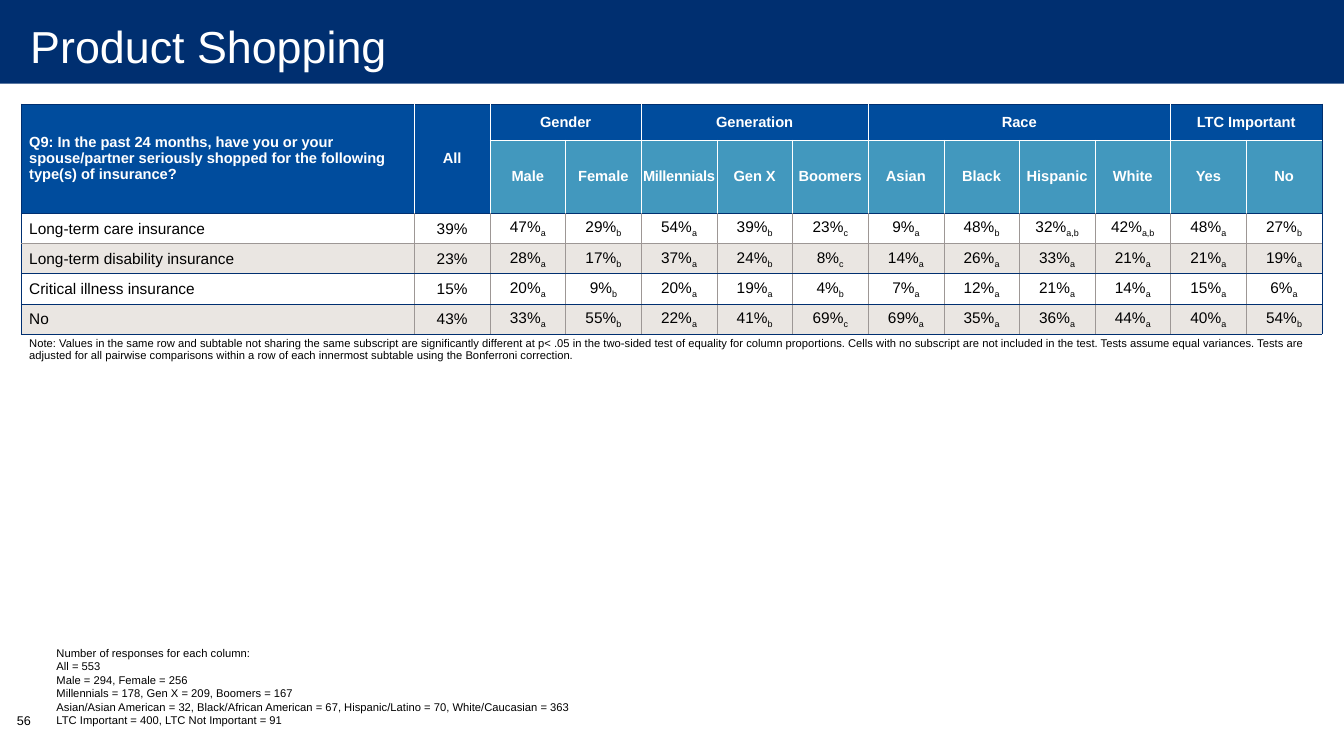
from lxml import etree
from pptx import Presentation
from pptx.dml.color import RGBColor
from pptx.enum.shapes import MSO_SHAPE
from pptx.enum.text import MSO_ANCHOR, MSO_AUTO_SIZE, PP_ALIGN
from pptx.oxml.ns import qn
from pptx.util import Inches, Pt

RECTANGLE = MSO_SHAPE.RECTANGLE
MIDDLE, BOTTOM = MSO_ANCHOR.MIDDLE, MSO_ANCHOR.BOTTOM
LEFT, CENTER = PP_ALIGN.LEFT, PP_ALIGN.CENTER
FIXED_SIZE = MSO_AUTO_SIZE.NONE

SLIDE_W, SLIDE_H = 13.33, 7.5
FONT = "Arial"
NAVY, BLUE, TEAL = "002F70", "004C9D", "4298BE"
SAND, GRAY, WHITE, BLACK = "EAE6E2", "9D9795", "FFFFFF", "000000"
PLAIN_TABLE_STYLE = "{2D5ABB26-0587-4C30-8999-92F81FD0307C}"

QUESTION = ("Q9: In the past 24 months, have you or your spouse/partner seriously "
            "shopped for the following type(s) of insurance?")
GROUPS = [
    ("Gender", ["Male", "Female"]),
    ("Generation", ["Millennials", "Gen X", "Boomers"]),
    ("Race", ["Asian", "Black", "Hispanic", "White"]),
    ("LTC Important", ["Yes", "No"]),
]
# Each answer: label, share of all, then share and subscript per subgroup
ANSWERS = [
    ("Long-term care insurance", "39%",
     "47%a 29%b 54%a 39%b 23%c 9%a 48%b 32%a,b 42%a,b 48%a 27%b"),
    ("Long-term disability insurance", "23%",
     "28%a 17%b 37%a 24%b 8%c 14%a 26%a 33%a 21%a 21%a 19%a"),
    ("Critical illness insurance", "15%",
     "20%a 9%b 20%a 19%a 4%b 7%a 12%a 21%a 14%a 15%a 6%a"),
    ("No", "43%",
     "33%a 55%b 22%a 41%b 69%c 69%a 35%a 36%a 44%a 40%a 54%b"),
]
NOTE = ("Note: Values in the same row and subtable not sharing the same subscript are "
        "significantly different at p< .05 in the two-sided test of equality for column "
        "proportions. Cells with no subscript are not included in the test. Tests assume "
        "equal variances. Tests are adjusted for all pairwise comparisons within a row of "
        "each innermost subtable using the Bonferroni correction.")
RESPONSES = [
    "Number of responses for each column:",
    "All = 553",
    "Male = 294, Female = 256",
    "Millennials = 178, Gen X = 209, Boomers = 167",
    "Asian/Asian American = 32, Black/African American = 67, "
    "Hispanic/Latino = 70, White/Caucasian = 363",
    "LTC Important = 400, LTC Not Important = 91",
]

HEADER_ROWS = 2
NOTE_ROW = HEADER_ROWS + len(ANSWERS)
COLUMNS = 2 + sum(len(subgroups) for _, subgroups in GROUPS)
ROW_EDGES = [NAVY, WHITE, NAVY, GRAY, NAVY, NAVY, NAVY]  # line above each row


def color(hex_value):
    return RGBColor.from_string(hex_value)


def style(paragraph, size, hex_value, bold=False, align=LEFT):
    paragraph.alignment = align
    font = paragraph.font
    font.name, font.size, font.bold = FONT, Pt(size), bold
    font.color.rgb = color(hex_value)


def place(shape, box):
    shape.left, shape.top, shape.width, shape.height = map(Inches, box)


def set_margins(holder, left, top, right, bottom):
    holder.margin_left, holder.margin_top = Inches(left), Inches(top)
    holder.margin_right, holder.margin_bottom = Inches(right), Inches(bottom)


def set_borders(cell, **sides):
    """Draw hairlines on the sides given as L, R, T or B."""
    properties = cell._tc.get_or_add_tcPr()
    for position, (side, hex_value) in enumerate(sides.items()):
        line = etree.Element(qn(f"a:ln{side}"), w=str(Pt(0.25)))
        fill = etree.SubElement(line, qn("a:solidFill"))
        etree.SubElement(fill, qn("a:srgbClr"), val=hex_value)
        properties.insert(position, line)


def fill_cell(cell, text, size, hex_value, fill, margins, bold=False, align=CENTER):
    """Write text, setting whatever follows a percent sign as a subscript."""
    cell.vertical_anchor = MIDDLE
    set_margins(cell, *margins)
    if fill:
        cell.fill.solid()
        cell.fill.fore_color.rgb = color(fill)
    else:
        cell.fill.background()
    paragraph = cell.text_frame.paragraphs[0]
    value, percent, subscript = text.partition("%")
    paragraph.add_run().text = value + percent
    if subscript:
        letters = paragraph.add_run()
        letters.text = subscript
        letters.font._element.set("baseline", "-25000")
    style(paragraph, size, hex_value, bold, align)


def add_header(table):
    def head(row, column, text, fill=BLUE, rows=1, columns=1,
             margins=(0, 0, 0, 0), align=CENTER):
        cell = table.cell(row, column)
        if rows * columns > 1:
            cell.merge(table.cell(row + rows - 1, column + columns - 1))
        fill_cell(cell, text, 10.5, WHITE, fill, margins, True, align)
        set_borders(cell, L=WHITE if column else NAVY,
                    R=NAVY if column + columns == COLUMNS else WHITE,
                    T=ROW_EDGES[row], B=ROW_EDGES[row + rows])
        return cell

    head(0, 0, QUESTION, rows=2, margins=(0.08, 0.1, 0.05, 0.1), align=LEFT)
    head(0, 1, "All", rows=2)
    column = 2
    for group, subgroups in GROUPS:
        head(0, column, group, columns=len(subgroups))
        for subgroup in subgroups:
            cell = head(1, column, subgroup, TEAL)
            if subgroup == "Millennials":
                run = cell.text_frame.paragraphs[0].runs[0]
                run.font._element.set("spc", "-20")
            column += 1


def add_answers(table):
    for row, (label, total, shares) in enumerate(ANSWERS, HEADER_ROWS):
        fill = SAND if (row - HEADER_ROWS) % 2 else None
        for column, text in enumerate([label, total, *shares.split()]):
            cell = table.cell(row, column)
            fill_cell(cell, text, 11, BLACK, fill,
                      (0.01 if column else 0.08, 0.01, 0.01, 0),
                      align=CENTER if column else LEFT)
            set_borders(cell, L=GRAY if column else NAVY,
                        R=NAVY if column == COLUMNS - 1 else GRAY,
                        T=ROW_EDGES[row], B=ROW_EDGES[row + 1])


def add_survey_table(slide, box):
    frame = slide.shapes.add_table(NOTE_ROW + 1, COLUMNS, *map(Inches, box))
    table = frame.table
    table._tbl.tblPr.find(qn("a:tableStyleId")).text = PLAIN_TABLE_STYLE
    table.horz_banding = table.first_row = False
    share_width = 0.75
    for index, column in enumerate(table.columns):
        column.width = Inches(share_width if index else box[2] - share_width * (COLUMNS - 1))
    for index, row in enumerate(table.rows):
        row.height = Inches(0.36 if index < HEADER_ROWS else 0.3)
    add_header(table)
    add_answers(table)
    note = table.cell(NOTE_ROW, 0)
    note.merge(table.cell(NOTE_ROW, COLUMNS - 1))
    fill_cell(note, NOTE, 8, BLACK, None, (0.08, 0.01, 0.01, 0), align=LEFT)
    set_borders(note, T=NAVY)


def add_title(slide, box):
    left, top, width, height = box
    band = slide.shapes.add_shape(RECTANGLE, *map(Inches, (left, top, width, 0.86)))
    band.shadow.inherit = False
    band.fill.solid()
    band.fill.fore_color.rgb = color(NAVY)
    band.line.fill.background()
    slide.shapes._spTree.insert(2, band._element)  # behind the title
    title = slide.shapes.title
    place(title, box)
    frame = title.text_frame
    frame.text = "Product Shopping"
    frame.auto_size, frame.word_wrap = FIXED_SIZE, True
    frame.vertical_anchor = MIDDLE
    set_margins(frame, 0.3, 0, 0.2, 0)
    style(frame.paragraphs[0], 32, WHITE)


def add_responses(slide, box):
    body = slide.placeholders[1]
    place(body, box)
    frame = body.text_frame
    frame.text = "\v".join(RESPONSES)
    frame.auto_size, frame.word_wrap = FIXED_SIZE, True
    frame.vertical_anchor = BOTTOM
    set_margins(frame, 0.1, 0.05, 0.1, 0.05)
    paragraph = frame.paragraphs[0]
    properties = paragraph._p.get_or_add_pPr()
    properties.set("marL", "0")
    properties.set("indent", "0")
    etree.SubElement(properties, qn("a:buNone"))
    paragraph.space_before = Pt(0)
    style(paragraph, 8, BLACK)


def add_page_number(slide, box):
    frame = slide.shapes.add_textbox(*map(Inches, box)).text_frame
    frame.word_wrap = True
    frame.text = "56"
    style(frame.paragraphs[0], 9, BLACK)


def main():
    deck = Presentation()
    deck.slide_width, deck.slide_height = Inches(SLIDE_W), Inches(SLIDE_H)
    slide = deck.slides.add_slide(deck.slide_layouts[1])
    add_title(slide, (0, -0.03, SLIDE_W, 0.97))
    add_responses(slide, (0.46, 6.36, 5.85, 0.9))
    add_page_number(slide, (0.07, 7.02, 0.49, 0.4))
    add_survey_table(slide, (0.21, 1.03, 12.9, 2.22))
    deck.save("out.pptx")


if __name__ == "__main__":
    main()
